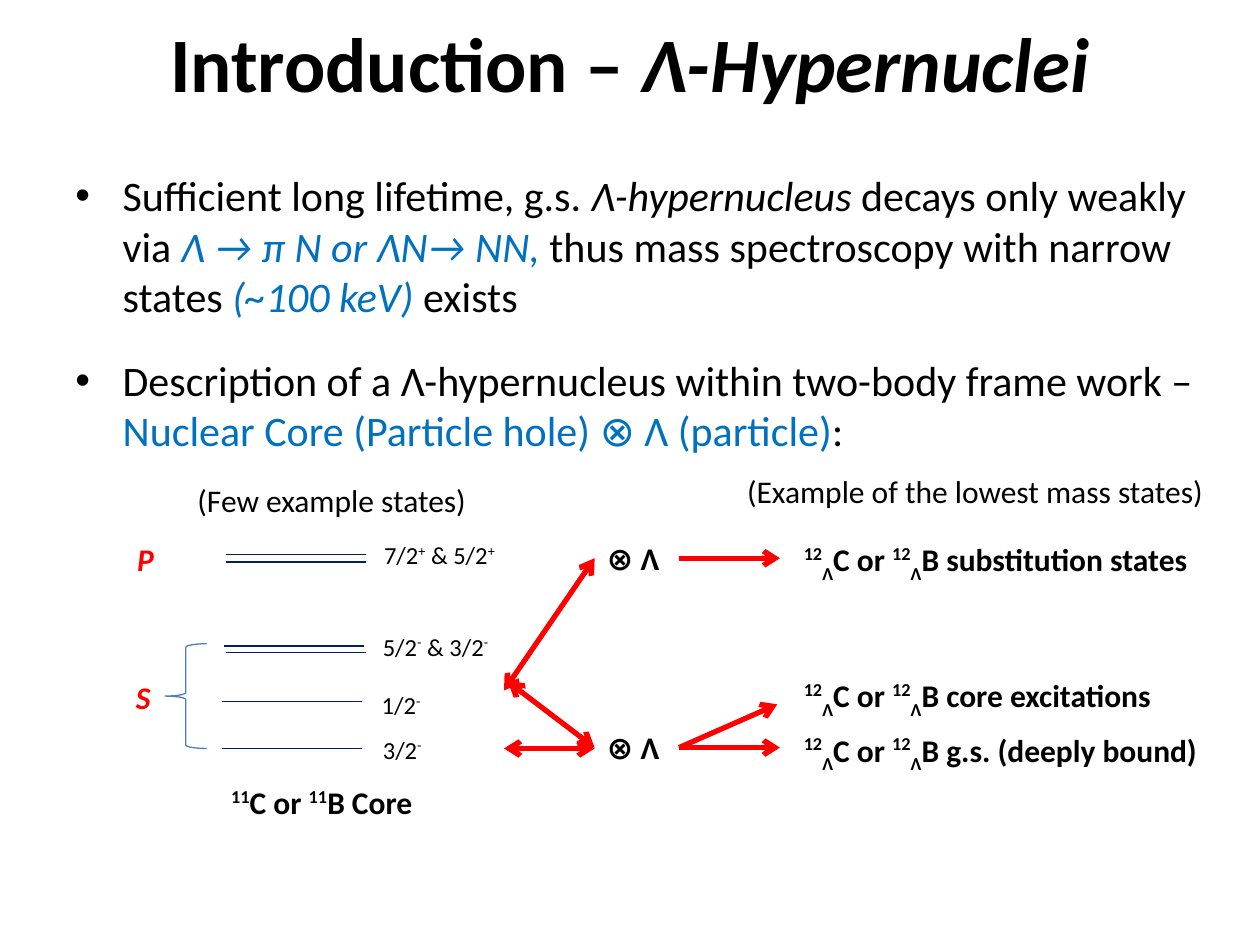
from lxml import etree
from pptx import Presentation
from pptx.dml.color import RGBColor
from pptx.enum.shapes import MSO_CONNECTOR, MSO_SHAPE
from pptx.enum.text import MSO_ANCHOR, PP_ALIGN
from pptx.oxml.ns import qn
from pptx.util import Pt

FONT = "Calibri"
BLACK = RGBColor(0x00, 0x00, 0x00)
BLUE = RGBColor(0x00, 0x70, 0xC0)
NAVY = RGBColor(0x00, 0x20, 0x60)
RED = RGBColor(0xFF, 0x00, 0x00)
BRACE_BLUE = RGBColor(0x4B, 0x7E, 0xBC)

SUPER, SUB = 36, -28
HYPERNUCLEI = [("12", SUPER), ("Λ", SUB), ("C or ", 0), ("12", SUPER), ("Λ", SUB)]
CORE = [("11", SUPER), ("C or ", 0), ("11", SUPER), ("B Core", 0)]


def add_run(p, text, size, color=BLACK, bold=False, italic=False, baseline=0):
    r = p.add_run()
    r.text = text
    font = r.font
    font.name, font.size, font.bold, font.italic = FONT, Pt(size), bold, italic
    font.color.rgb = color
    if baseline:
        r._r.get_or_add_rPr().set("baseline", str(baseline * 1000))


def add_box(s, x, y, w, h):
    tf = s.shapes.add_textbox(Pt(x), Pt(y), Pt(w), Pt(h)).text_frame
    tf.word_wrap = True
    return tf


def add_label(s, x, y, w, parts, size=18, align=PP_ALIGN.LEFT, **style):
    """Add a one-line label; parts is a text or a list of (text, baseline)."""
    p = add_box(s, x, y, w, size * 1.6).paragraphs[0]
    p.alignment = align
    if isinstance(parts, str):
        parts = [(parts, 0)]
    for text, baseline in parts:
        add_run(p, text, size, baseline=baseline, **style)


def add_line(s, start, end, color, width, head=False, tail=False):
    line = s.shapes.add_connector(MSO_CONNECTOR.STRAIGHT, *map(Pt, start + end))
    line.line.color.rgb = color
    line.line.width = Pt(width)
    ln = line.line._get_or_add_ln()
    for tag, wanted in (("a:headEnd", head), ("a:tailEnd", tail)):
        if wanted:
            etree.SubElement(ln, qn(tag), type="arrow")
    etree.SubElement(line._element.spPr, qn("a:effectLst"))


def add_arrow(s, start, end, both=False):
    add_line(s, start, end, RED, 3, head=both, tail=True)


def add_bullet(p, runs):
    """Fill p as a hanging bullet from (text, style) runs."""
    pPr = p._p.get_or_add_pPr()
    pPr.set("marL", str(Pt(27)))
    pPr.set("indent", str(-Pt(27)))
    etree.SubElement(pPr, qn("a:buFont"), typeface="Arial")
    etree.SubElement(pPr, qn("a:buChar"), char="•")
    for text, style in runs:
        add_run(p, text, 24, **style)


def add_title(s):
    tf = add_box(s, 0, 0, 720, 70.5)
    tf.vertical_anchor = MSO_ANCHOR.MIDDLE
    p = tf.paragraphs[0]
    p.alignment = PP_ALIGN.CENTER
    add_run(p, "Introduction – ", 44, bold=True)
    add_run(p, "Λ-Hypernuclei", 44, bold=True, italic=True)


def add_body(s):
    formula = {"color": BLUE, "italic": True}
    tf = add_box(s, 36, 93.6, 666, 170.6)
    add_bullet(tf.paragraphs[0], [
        ("Sufficient long lifetime, g.s. ", {}),
        ("Λ-hypernucleus ", {"italic": True}),
        ("decays only weakly via ", {}),
        ("Λ → π N or ΛN→ NN, ", formula),
        ("thus mass spectroscopy with narrow states ", {}),
        ("(~100 keV) ", formula),
        ("exists", {}),
    ])
    p = tf.add_paragraph()
    p.space_before = Pt(19)
    add_bullet(p, [
        ("Description of a Λ-hypernucleus within two-body frame work – ", {}),
        ("Nuclear Core (Particle hole) ⊗ Λ (particle)", {"color": BLUE}),
        (":", {}),
    ])


def add_core_levels(s):
    levels = [(128.9, 316.8), (128.9, 321.1), (128.2, 369.1),
              (128.9, 373), (126.7, 401), (126.7, 427.7)]
    for x, y in levels:
        add_line(s, (x, y), (x + 80, y), NAVY, 0.75)

    spins = [
        (212.4, 305.3, 80, [("7/2", "+"), (" & 5/2", "+")]),
        (211.7, 357.8, 80, [("5/2", "-"), (" & 3/2", "-")]),
        (211, 391, 37.4, [("1/2", "-")]),
        (211.7, 416.2, 37.4, [("3/2", "-")]),
    ]
    for x, y, w, states in spins:
        parts = [part for spin, parity in states
                 for part in ((spin, 0), (parity, SUPER))]
        add_label(s, x, y, w, parts, size=14)

    brace = s.shapes.add_shape(MSO_SHAPE.LEFT_BRACE,
                               Pt(94.3), Pt(367.9), Pt(23.8), Pt(59.8))
    brace.shadow.inherit = False
    brace.fill.background()
    brace.line.color.rgb = BRACE_BLUE
    brace.line.width = Pt(0.75)

    for shell, x, y in (("P", 71.3, 305.3), ("S", 70.6, 383.8)):
        add_label(s, x, y, 24.5, shell, color=RED, bold=True, italic=True)
    add_label(s, 116.6, 444.2, 134.6, CORE, align=PP_ALIGN.CENTER, bold=True)


def add_couplings(s):
    left, right, tip = 339.8, 388.1, 445.7
    upper, lower = 319, 427.2
    for y in (upper, lower):
        add_label(s, left, y - 14.5, 48.2, "⊗ Λ", bold=True)
        add_arrow(s, (right, y), (tip, y))
    add_arrow(s, (right, lower), (444.2, 402.5))

    for start, y in (((288, 394.6), upper), ((290.2, 389.5), lower),
                     ((288, 427.7), lower + 0.5)):
        add_arrow(s, start, (left, y), both=True)

    results = [("B substitution states", 305.3), ("B core excitations", 383),
               ("B g.s. (deeply bound)", 414)]
    for text, y in results:
        add_label(s, 452.2, y, 267.8, HYPERNUCLEI + [(text, 0)], bold=True)


def main():
    prs = Presentation()
    prs.slide_width, prs.slide_height = Pt(720), Pt(540)
    s = prs.slides.add_slide(prs.slide_layouts[6])
    add_title(s)
    add_body(s)
    add_label(s, 105.8, 271.4, 172, "(Few example states)")
    add_label(s, 419.8, 266.4, 285.8, "(Example of the lowest mass states)")
    add_core_levels(s)
    add_couplings(s)
    prs.save("out.pptx")


if __name__ == "__main__":
    main()
